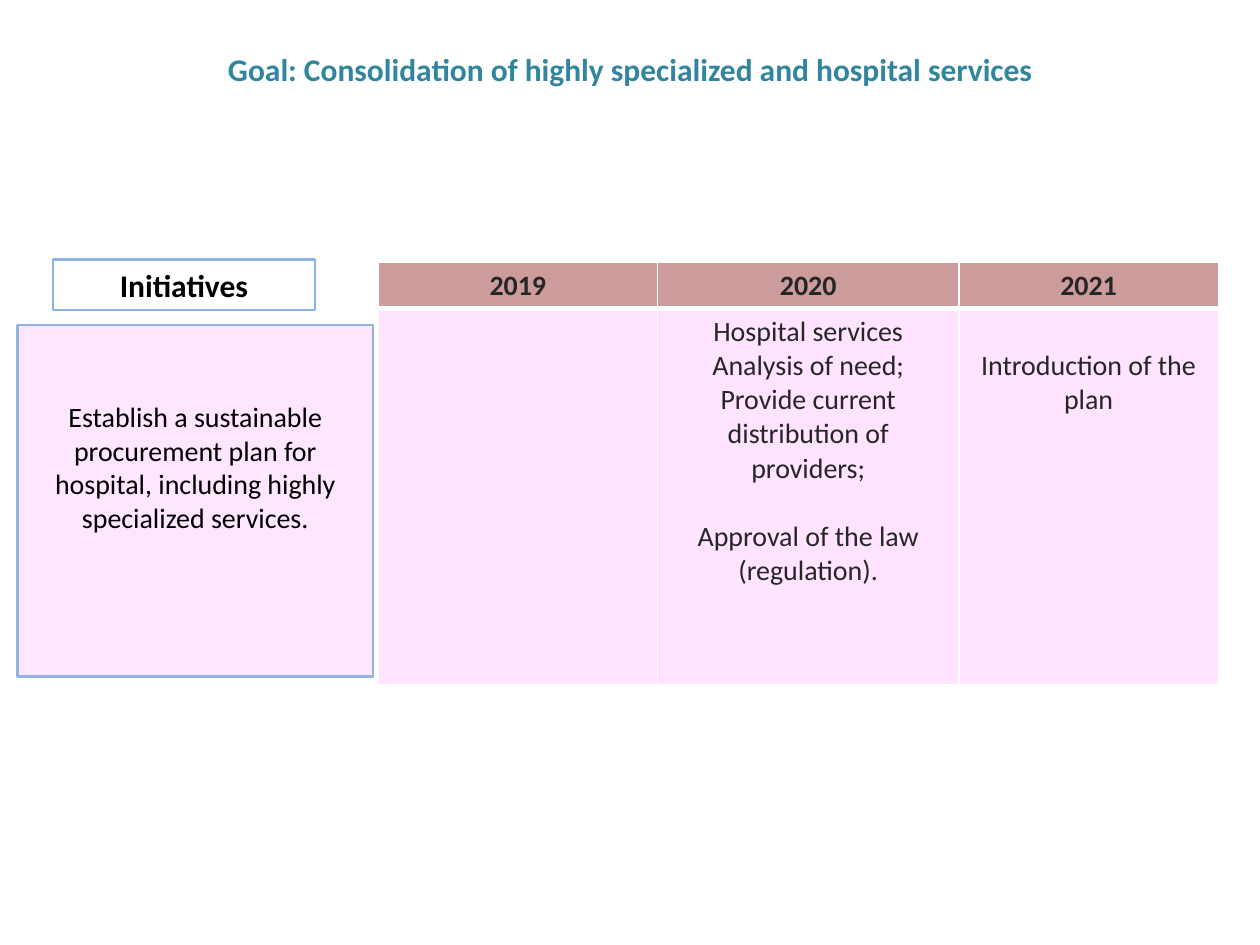
from dataclasses import dataclass

from lxml.etree import SubElement
from pptx import Presentation
from pptx.dml.color import RGBColor
from pptx.enum.shapes import MSO_SHAPE
from pptx.enum.text import MSO_ANCHOR, PP_ALIGN
from pptx.oxml import parse_xml
from pptx.oxml.ns import nsdecls, qn
from pptx.util import Inches, Pt

COLORS = {
    "goal": "31859C",
    "ink": "000000",
    "table_ink": "262626",
    "outline": "8EB4E3",
    "pink": "FFCCFF",
    "header": "953735",
    "rule": "FFFFFF",
}
FONT = "Calibri"
GRID_COLUMNS, GRID_ROWS = 100, 75
SLIDE_WIDTH, SLIDE_HEIGHT = Inches(10), Inches(7.5)
LINE_HEIGHT = Pt(19.5)
INSET = Inches(0.05)


@dataclass
class Line:
    text: str
    gap_lines: int = 0


@dataclass
class Style:
    size: int
    color: str
    bold: bool = False


@dataclass
class Box:
    left: float
    top: float
    width: float
    height: float
    text: str
    style: Style
    fill: str = ""
    opacity: int = 100
    gap_lines: int = 0


@dataclass
class Year:
    name: str
    width: float
    plans: list[Line]
    gap_lines: int = 0


BODY_STYLE = Style(16, "table_ink")
HEADER_STYLE = Style(16, "table_ink", True)
GOAL = Box(1.7, 1.7, 96.7, 7.5,
           "Goal: Consolidation of highly specialized and hospital services",
           Style(18, "goal", True))
INITIATIVES = [
    Box(4.2, 20.6, 20.8, 4, "Initiatives", Style(18, "ink", True)),
    Box(1.4, 25.8, 28.2, 27.9,
        "Establish a sustainable procurement plan for hospital, "
        "including highly specialized services.",
        Style(16, "ink"), "pink", 49, 2),
]
YEARS = [
    Year("2019", 22.2, []),
    Year("2020", 23.9, [
        Line("Hospital services"),
        Line("Analysis of need; Provide current distribution of providers;"),
        Line("Approval of the law (regulation).", 1),
    ]),
    Year("2021", 20.6, [Line("Introduction of the plan")], 1),
]
TABLE_LEFT, TABLE_TOP = 30, 20.8
ROW_HEIGHTS = [3.6, 29.9]


def across(columns: float) -> int:
    return round(SLIDE_WIDTH * columns / GRID_COLUMNS)


def down(rows: float) -> int:
    return round(SLIDE_HEIGHT * rows / GRID_ROWS)


def frame(box: Box) -> tuple:
    return across(box.left), down(box.top), across(box.width), down(box.height)


def write(text_frame, lines: list[Line], style: Style) -> None:
    text_frame.word_wrap = True
    for index, line in enumerate(lines):
        paragraph = text_frame.add_paragraph() if index else text_frame.paragraphs[0]
        paragraph.alignment = PP_ALIGN.CENTER
        if line.gap_lines:
            paragraph.space_before = LINE_HEIGHT * line.gap_lines
        run = paragraph.add_run()
        run.text = line.text
        run.font.name = FONT
        run.font.size = Pt(style.size)
        run.font.bold = style.bold
        run.font.color.rgb = RGBColor.from_string(COLORS[style.color])


def paint(fill, properties, color: str, opacity: int) -> None:
    fill.solid()
    fill.fore_color.rgb = RGBColor.from_string(COLORS[color])
    if opacity < 100:
        tint = properties.find(qn("a:solidFill"))[0]
        SubElement(tint, qn("a:alpha")).set("val", str(opacity * 1000))


def draw_goal(slide, box: Box) -> None:
    text_frame = slide.shapes.add_textbox(*frame(box)).text_frame
    text_frame.vertical_anchor = MSO_ANCHOR.MIDDLE
    write(text_frame, [Line(box.text)], box.style)


def draw_initiative(slide, box: Box) -> None:
    panel = slide.shapes.add_shape(MSO_SHAPE.RECTANGLE, *frame(box))
    panel.shadow.inherit = False
    panel.line.color.rgb = RGBColor.from_string(COLORS["outline"])
    panel.line.width = Pt(1.5)
    if box.fill:
        paint(panel.fill, panel.element.spPr, box.fill, box.opacity)
    else:
        panel.fill.background()
    panel.text_frame.vertical_anchor = MSO_ANCHOR.TOP
    panel.text_frame.margin_top = INSET + LINE_HEIGHT * box.gap_lines
    write(panel.text_frame, [Line(box.text)], box.style)


def rule_cell(properties, widths: dict[str, int]) -> None:
    for index, (side, width) in enumerate(widths.items()):
        properties.insert(index, parse_xml(
            f'<a:ln{side} {nsdecls("a")} w="{Pt(width)}"><a:solidFill>'
            f'<a:srgbClr val="{COLORS["rule"]}"/></a:solidFill></a:ln{side}>'))


def fill_cell(cell, lines: list[Line], style: Style, color: str,
              opacity: int, rules: dict[str, int], gap_lines: int = 0) -> None:
    write(cell.text_frame, lines, style)
    cell.margin_top = INSET + LINE_HEIGHT * gap_lines
    properties = cell._tc.get_or_add_tcPr()
    paint(cell.fill, properties, color, opacity)
    rule_cell(properties, rules)


def draw_timeline(slide, years: list[Year]) -> None:
    table = slide.shapes.add_table(
        len(ROW_HEIGHTS), len(years), across(TABLE_LEFT), down(TABLE_TOP),
        across(sum(year.width for year in years)), down(sum(ROW_HEIGHTS))).table
    table.horz_banding = False
    for row, height in zip(table.rows, ROW_HEIGHTS):
        row.height = down(height)
    for index, year in enumerate(years):
        table.columns[index].width = across(year.width)
        fill_cell(table.cell(0, index), [Line(year.name)], HEADER_STYLE,
                  "header", 49, {"L": 1, "R": 1, "T": 1, "B": 3})
        fill_cell(table.cell(1, index), year.plans, BODY_STYLE,
                  "pink", 55, {"L": 1, "R": 1, "T": 3, "B": 1}, year.gap_lines)


def main() -> None:
    presentation = Presentation()
    presentation.slide_width = SLIDE_WIDTH
    presentation.slide_height = SLIDE_HEIGHT
    slide = presentation.slides.add_slide(presentation.slide_layouts[6])
    draw_goal(slide, GOAL)
    for box in INITIATIVES:
        draw_initiative(slide, box)
    draw_timeline(slide, YEARS)
    presentation.save("out.pptx")


if __name__ == "__main__":
    main()
